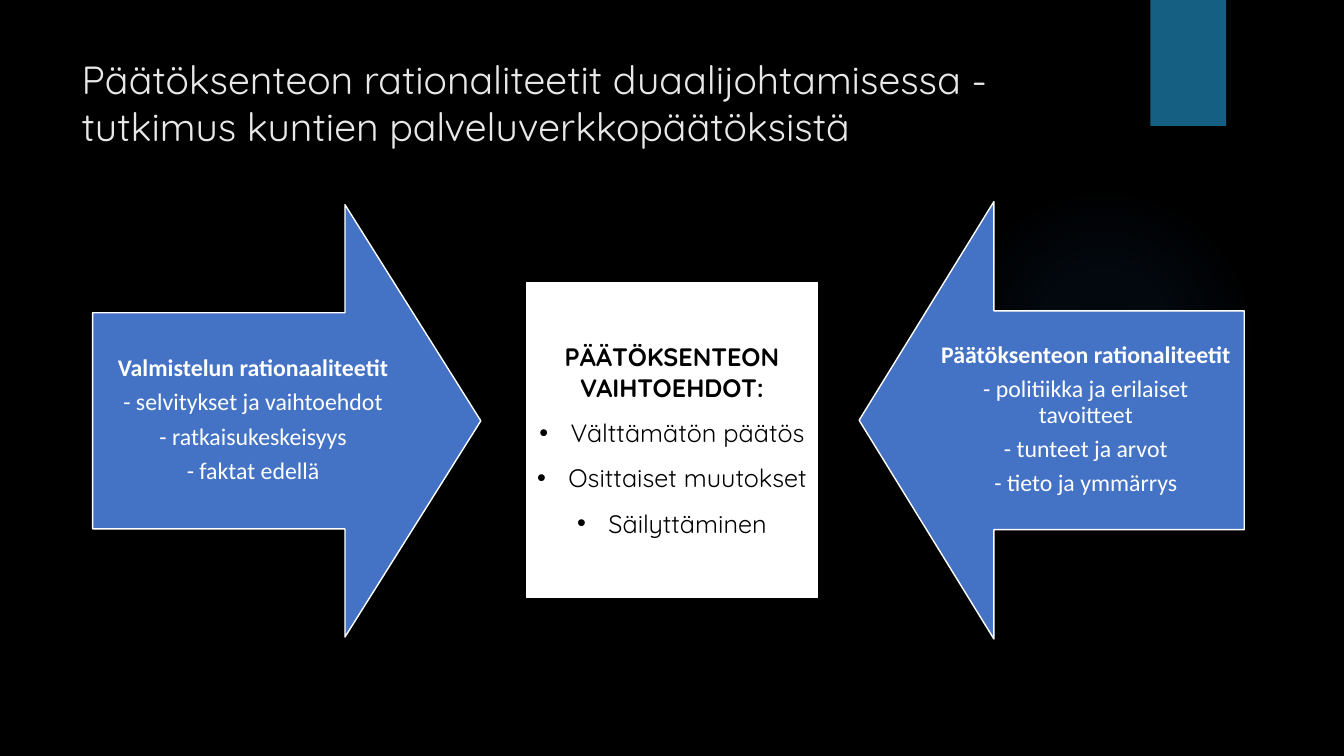
from lxml import etree
from pptx import Presentation, util as u
from pptx.dml.color import RGBColor
from pptx.enum import shapes, text
from pptx.oxml import parse_xml
from pptx.oxml.ns import nsdecls, qn

TITLE = "Päätöksenteon rationaliteetit duaalijohtamisessa -  tutkimus kuntien palveluverkkopäätöksistä"
ARROWS = [
    {"area": (5.25, 30, 32.18, 51.33), "turn": 270, "text_area": (6.9, 41.33, 23.86, 28.53),
     "lines": ["Valmistelun rationaaliteetit", "- selvitykset ja vaihtoehdot",
               "- ratkaisukeskeisyys", "- faktat edellä"]},
    {"area": (61.97, 30.13, 32.56, 50.93), "turn": 90, "text_area": (68.94, 41.07, 23.71, 28.93),
     "lines": ["Päätöksenteon rationaliteetit", "- politiikka ja erilaiset tavoitteet",
               "- tunteet ja arvot", "- tieto ja ymmärrys"]},
]
OPTIONS = ["PÄÄTÖKSENTEON VAIHTOEHDOT:", "Välttämätön päätös", "Osittaiset muutokset", "Säilyttäminen"]
TITLE_AREA = (5.33, 6.67, 77.19, 20.4)
GLOW_AREA = (70.59, 24.4, 23.11, 41.07)
TAB_AREA = (85.6, 0, 5.63, 16.67)
OPTIONS_AREA = (39.08, 37.2, 21.83, 42)
GLOW_STOPS = [(0, 7), (36, 6), (69, 0)]

deck = Presentation()
deck.slide_width, deck.slide_height = u.Inches(13.33), u.Inches(7.5)
page = deck.slides.add_slide(deck.slide_layouts[5])


def color(code):
    return RGBColor.from_string(code)


def place(area):
    sides = (deck.slide_width, deck.slide_height) * 2
    return [round(side * share / 100) for side, share in zip(sides, area)]


def apply(target, values):
    for name, value in values.items():
        setattr(target, name, value)


def add_block(kind, area, fill, line=None, width=1):
    block = page.shapes.add_shape(kind, *place(area))
    block.shadow.inherit = False
    block.fill.solid()
    block.fill.fore_color.rgb = color(fill)
    if line:
        block.line.color.rgb = color(line)
        block.line.width = u.Pt(width)
    else:
        block.line.fill.background()
    return block


def write(box, lines, font, ink, frame_values, spacing, bullets=False):
    frame = box.text_frame
    apply(frame, {"word_wrap": True, **frame_values})
    for index, line in enumerate(lines):
        para = frame.paragraphs[0] if index == 0 else frame.add_paragraph()
        apply(para, {"alignment": text.PP_ALIGN.CENTER, **spacing})
        if index == 0 and bullets:
            para.line_spacing = 1.0
        elif bullets:
            props = para._p.get_or_add_pPr()
            props.set("marL", str(u.Inches(0.31)))
            props.set("indent", str(-u.Inches(0.31)))
            etree.SubElement(props, qn("a:buFont")).set("typeface", "Arial")
            etree.SubElement(props, qn("a:buChar")).set("char", "•")
        span = para.add_run()
        span.text = line
        apply(span.font, {"bold": index == 0, **font})
        span.font.color.rgb = color(ink)


page.background.fill.solid()
page.background.fill.fore_color.rgb = color("000000")

glow = add_block(shapes.MSO_SHAPE.OVAL, GLOW_AREA, "2D7FCF")
stops = "".join(
    f'<a:gs pos="{position * 1000}"><a:srgbClr val="2D7FCF"><a:alpha val="{alpha * 1000}"/></a:srgbClr></a:gs>'
    for position, alpha in GLOW_STOPS)
gradient = parse_xml(
    f'<a:gradFill {nsdecls("a")} rotWithShape="1"><a:gsLst>{stops}</a:gsLst><a:path path="circle">'
    '<a:fillToRect l="50000" t="50000" r="50000" b="50000"/></a:path></a:gradFill>')
solid = glow._element.spPr.find(qn("a:solidFill"))
solid.getparent().replace(solid, gradient)

add_block(shapes.MSO_SHAPE.RECTANGLE, TAB_AREA, "156082")

title = page.shapes.title
apply(title, dict(zip(("left", "top", "width", "height"), place(TITLE_AREA))))
write(title, [TITLE], {"name": "Quicksand", "size": u.Pt(28), "bold": False}, "E8E8E8",
      {"vertical_anchor": text.MSO_ANCHOR.TOP, "auto_size": text.MSO_AUTO_SIZE.NONE},
      {"alignment": text.PP_ALIGN.LEFT, "line_spacing": 1.0})

middle = {"vertical_anchor": text.MSO_ANCHOR.MIDDLE}
margins = {f"margin_{side}": u.Inches(0.13) for side in ("left", "right", "top", "bottom")}
for item in ARROWS:
    arrow = add_block(shapes.MSO_SHAPE.DOWN_ARROW, item["area"], "4472C4", "FFFFFF")
    arrow.rotation = item["turn"]
    arrow.adjustments[0], arrow.adjustments[1] = 0.5, 0.35
    label = page.shapes.add_textbox(*place(item["text_area"]))
    write(label, item["lines"], {"name": "Calibri", "size": u.Pt(17)}, "FFFFFF",
          {**middle, **margins}, {"line_spacing": 0.9, "space_after": u.Pt(6)})

options = add_block(shapes.MSO_SHAPE.RECTANGLE, OPTIONS_AREA, "FFFFFF", "000000", 1.5)
write(options, OPTIONS, {"name": "Quicksand", "size": u.Pt(18)}, "000000",
      middle, {"line_spacing": 1.5}, bullets=True)

deck.save("out.pptx")
